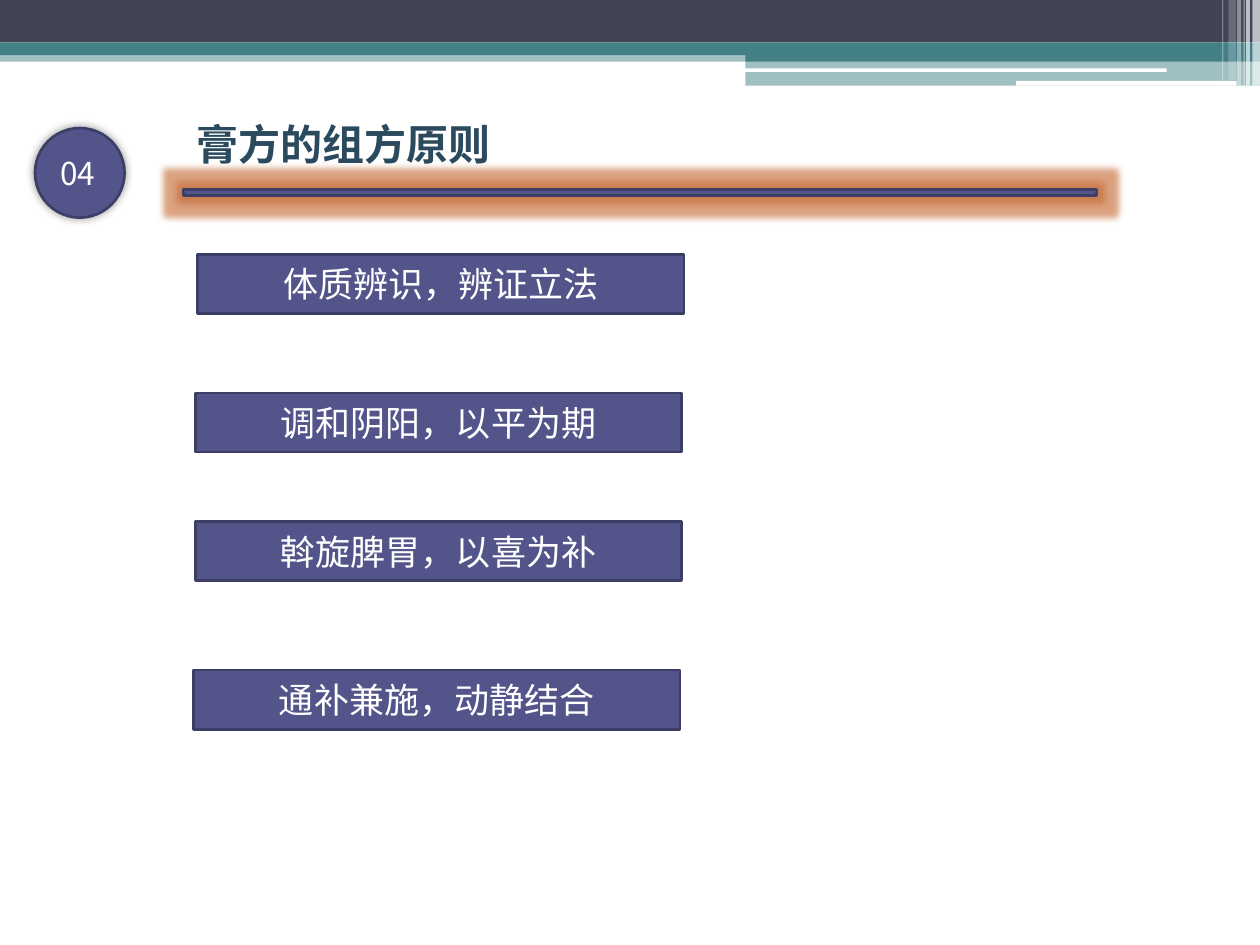
import pptx
import pptx.util
import pptx.dml.color
import pptx.enum.shapes
import pptx.enum.text
import pptx.oxml
import pptx.oxml.ns

Pt = pptx.util.Pt
RGB = pptx.dml.color.RGBColor
SHAPE = pptx.enum.shapes.MSO_SHAPE
ALIGN = pptx.enum.text.PP_ALIGN
ANCHOR = pptx.enum.text.MSO_ANCHOR
qn = pptx.oxml.ns.qn

THEME = {
    "font": "Noto Sans CJK SC",
    "slate": "424456", "teal": "438086", "white": "FFFFFF",
    "purple": "53548A", "outline": "3D3E66", "title": "2B4A5E",
    "glow": "C4652D", "shadow": "000000",
    "title_size": 24, "item_size": 20, "number_size": 18, "line": 1.5,
}

TITLE = "膏方的组方原则"
NUMBER = "04"
# text, left, top
PRINCIPLES = [
    ("体质辨识，辨证立法", 113, 145.4),
    ("调和阴阳，以平为期", 111.6, 224.6),
    ("斡旋脾胃，以喜为补", 111.6, 298),
    ("通补兼施，动静结合", 110.6, 383),
]
ITEM_W, ITEM_H = 278, 33.8

# left, top, width, height, colour, opacity in %
BANDS = [
    (0, 28.8, 720, 6.5, "teal", 50),
    (0, 0, 720, 24.3, "slate", 100),
    (0, 24.3, 720, 7.2, "teal", 100),
    (426, 28, 294, 7.2, "teal", 100),
    (426, 35.2, 294, 13.7, "teal", 50),
]
SLOTS = [(425.5, 39.1, 241.2, 2), (580.6, 46.2, 126, 2.7)]
# left, width, height, opacity in %
STRIPES = [
    (715.7, 4.3, 49, 65), (712.1, 2.2, 49, 65), (710.6, 0.7, 49, 60),
    (707, 2.2, 49, 40), (702, 4.3, 46, 20), (698.4, 0.7, 46, 30),
]


def add_shape(s, kind, box, colour, opacity=100, outlined=False):
    sp = s.shapes.add_shape(kind, *map(Pt, box))
    sp.shadow.inherit = False
    sp.fill.solid()
    sp.fill.fore_color.rgb = RGB.from_string(THEME[colour])
    if opacity < 100:
        clr = sp._element.spPr.find(".//" + qn("a:srgbClr"))
        clr.append(pptx.oxml.parse_xml(
            f'<a:alpha {pptx.oxml.ns.nsdecls("a")} val="{opacity * 1000}"/>'))
    if outlined:
        sp.line.color.rgb = RGB.from_string(THEME["outline"])
        sp.line.width = Pt(THEME["line"])
    else:
        sp.line.fill.background()
    return sp


def add_effect(sp, tag, colour, opacity, **attrs):
    values = " ".join(f'{k}="{v}"' for k, v in attrs.items())
    sp._element.spPr.find(qn("a:effectLst")).append(pptx.oxml.parse_xml(
        f'<a:{tag} {pptx.oxml.ns.nsdecls("a")} {values}>'
        f'<a:srgbClr val="{THEME[colour]}"><a:alpha val="{opacity * 1000}"/>'
        f'</a:srgbClr></a:{tag}>'))


def set_text(sp, text, size, colour, align, anchor, bold=False):
    tf = sp.text_frame
    tf.vertical_anchor = anchor
    tf.word_wrap = True
    p = tf.paragraphs[0]
    p.alignment = align
    r = p.add_run()
    r.text = text
    for name, value in {"size": Pt(THEME[size]), "bold": bold,
                        "name": THEME["font"]}.items():
        setattr(r.font, name, value)
    r.font.color.rgb = RGB.from_string(THEME[colour])
    r.font._element.find(qn("a:latin")).addnext(pptx.oxml.parse_xml(
        f'<a:ea {pptx.oxml.ns.nsdecls("a")} typeface="{THEME["font"]}"/>'))


def main():
    prs = pptx.Presentation()
    prs.slide_width, prs.slide_height = Pt(720), Pt(540)
    s = prs.slides.add_slide(prs.slide_layouts[5])

    for *box, colour, opacity in BANDS:
        add_shape(s, SHAPE.RECTANGLE, box, colour, opacity)
    for box in SLOTS:
        add_shape(s, SHAPE.ROUNDED_RECTANGLE, box, "white")
    for left, width, height, opacity in STRIPES:
        add_shape(s, SHAPE.RECTANGLE, (left, 0, width, height), "white", opacity)

    badge = add_shape(s, SHAPE.OVAL, (20, 73.2, 51.2, 51.2), "purple", outlined=True)
    add_effect(badge, "outerShdw", "shadow", 40, blurRad=Pt(5), dist=0, dir=0)
    set_text(badge, NUMBER, "number_size", "white", ALIGN.LEFT, ANCHOR.MIDDLE)

    rule = add_shape(s, SHAPE.RECTANGLE, (104.9, 108.2, 521.6, 3.6), "purple", outlined=True)
    add_effect(rule, "glow", "glow", 60, rad=Pt(8))

    title = s.shapes.title
    for name, value in {"left": 104.9, "top": 64.2, "width": 227, "height": 36}.items():
        setattr(title, name, Pt(value))
    set_text(title, TITLE, "title_size", "title", ALIGN.LEFT, ANCHOR.TOP, bold=True)
    title.text_frame.auto_size = pptx.enum.text.MSO_AUTO_SIZE.SHAPE_TO_FIT_TEXT

    for text, left, top in PRINCIPLES:
        item = add_shape(s, SHAPE.RECTANGLE, (left, top, ITEM_W, ITEM_H),
                         "purple", outlined=True)
        set_text(item, text, "item_size", "white", ALIGN.CENTER, ANCHOR.MIDDLE)

    prs.save("out.pptx")


if __name__ == "__main__":
    main()
